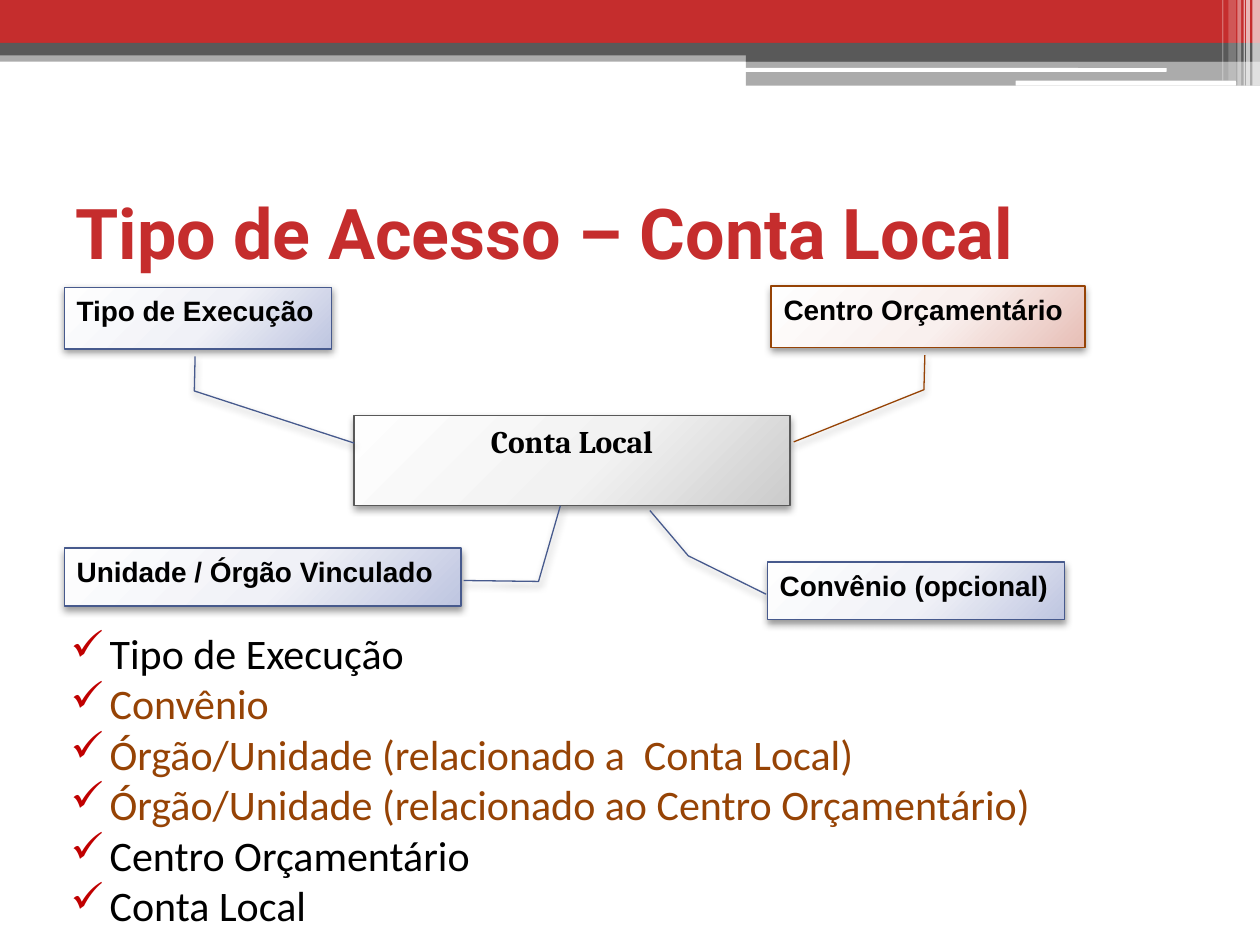
from dataclasses import dataclass

from pptx import Presentation
from pptx.dml.color import RGBColor
from pptx.enum.shapes import MSO_SHAPE as Preset
from pptx.enum.text import MSO_ANCHOR as Anchor, MSO_AUTO_SIZE as AutoSize, PP_ALIGN as Align
from pptx.oxml import parse_xml
from pptx.oxml.ns import nsdecls
from pptx.util import Inches, Pt


@dataclass(frozen=True)
class Theme:
    red: str = "C52D2D"
    gray: str = "595959"
    white: str = "FFFFFF"
    black: str = "000000"
    brown: str = "964305"
    check: str = "C00000"
    gray_box: tuple = ("595959", "F2F2F2", "CBCBCB")
    blue_box: tuple = ("475A8D", "F0F1F7", "BEC5E0")
    rose_box: tuple = ("964305", "F9F0EE", "E7BEB6")
    title_size: int = 40
    list_size: int = 24
    center_size: int = 18
    label_size: int = 16


THEME = Theme()


def add_run(paragraph, words, font, size, color, bold=False):
    run = paragraph.add_run()
    run.text = words
    run.font.name = font
    run.font.size = Pt(size)
    run.font.bold = bold
    run.font.color.rgb = RGBColor.from_string(color)


def add_bar(slide, box, color, opacity=100, preset=Preset.RECTANGLE):
    bar = slide.shapes.add_shape(preset, *map(Inches, box))
    bar.shadow.inherit = False
    bar.line.fill.background()
    bar.fill.solid()
    bar.fill.fore_color.rgb = RGBColor.from_string(color)
    if opacity < 100:
        alpha = parse_xml(f'<a:alpha {nsdecls("a")} val="{opacity * 1000}"/>')
        bar.fill._xPr.solidFill[0].append(alpha)


def add_header(slide, left, top, width):
    tab, tab_width = left + 5.92, width - 5.92
    add_bar(slide, (left, top + 0.4, width, 0.09), THEME.gray, 50)
    add_bar(slide, (left, top, width, 0.34), THEME.red)
    add_bar(slide, (left, top + 0.34, width, 0.1), THEME.gray)
    add_bar(slide, (tab, top + 0.39, tab_width, 0.1), THEME.gray)
    add_bar(slide, (tab, top + 0.48, tab_width, 0.2), THEME.gray, 50)
    for x, y, length, height in ((5.91, 0.54, 3.35, 0.03), (8.06, 0.64, 1.75, 0.04)):
        add_bar(slide, (left + x, top + y, length, height), THEME.white,
                preset=Preset.ROUNDED_RECTANGLE)
    stripes = ((9.94, 0.06, 0.68, 65), (9.89, 0.03, 0.68, 65), (9.87, 0.01, 0.68, 60),
               (9.82, 0.03, 0.68, 40), (9.75, 0.06, 0.64, 20), (9.7, 0.01, 0.64, 30))
    for x, thickness, height, opacity in stripes:
        add_bar(slide, (left + x, top, thickness, height), THEME.white, opacity)


def add_title(slide, box, words):
    title = slide.shapes.add_textbox(*map(Inches, box)).text_frame
    title.word_wrap = True
    title.vertical_anchor = Anchor.MIDDLE
    add_run(title.paragraphs[0], words, "Roboto", THEME.title_size, THEME.red, True)


def add_checklist(slide, box, items):
    checklist = slide.shapes.add_textbox(*map(Inches, box)).text_frame
    checklist.word_wrap = True
    checklist.auto_size = AutoSize.SHAPE_TO_FIT_TEXT
    checklist.margin_left = checklist.margin_right = Inches(0.09)
    checklist.margin_top = checklist.margin_bottom = Inches(0.04)
    for index, (words, color) in enumerate(items):
        item = checklist.add_paragraph() if index else checklist.paragraphs[0]
        item.alignment = Align.JUSTIFY
        properties = item._p.get_or_add_pPr()
        properties.set("marL", str(Inches(0.31)))
        properties.set("indent", str(-Inches(0.31)))
        properties.append(parse_xml(
            f'<a:buClr {nsdecls("a")}><a:srgbClr val="{THEME.check}"/></a:buClr>'))
        properties.append(parse_xml(f'<a:buChar {nsdecls("a")} char="✓"/>'))
        add_run(item, words, "Calibri", THEME.list_size, color)


def style_box(node, colors):
    border, middle, edge = colors
    node.line.color.rgb = RGBColor.from_string(border)
    node.line.width = Pt(0.75)
    node.fill.solid()
    stops = "".join(f'<a:gs pos="{position}000"><a:srgbClr val="{color}"/></a:gs>'
                    for position, color in ((0, "FEFEFE"), (55, middle), (100, edge)))
    gradient = parse_xml(
        f'<a:gradFill {nsdecls("a")} rotWithShape="1"><a:gsLst>{stops}</a:gsLst>'
        '<a:path path="circle"><a:fillToRect l="-40000" t="-90000" r="140000" b="190000"/>'
        '</a:path></a:gradFill>')
    properties = node._element.spPr
    properties.replace(properties.solidFill, gradient)
    node.shadow.inherit = False
    properties.effectLst.append(parse_xml(
        f'<a:outerShdw {nsdecls("a")} blurRad="{Pt(4.1)}" dist="{Pt(2)}" dir="5400000" '
        f'rotWithShape="0"><a:srgbClr val="{THEME.black}"><a:alpha val="40000"/></a:srgbClr>'
        '</a:outerShdw>'))


def add_node(slide, box, words, colors, font, size, align=Align.LEFT, leader=None):
    preset = Preset.LINE_CALLOUT_2 if leader else Preset.RECTANGLE
    node = slide.shapes.add_shape(preset, *map(Inches, box))
    for index, value in enumerate(leader or ()):
        node.adjustments[index] = value
    style_box(node, colors)
    label = node.text_frame
    label.word_wrap = True
    label.vertical_anchor = Anchor.TOP
    label.paragraphs[0].alignment = align
    add_run(label.paragraphs[0], words, font, size, THEME.black, True)


def add_account_map(slide, left, top):
    add_node(slide, (left + 2.3, top + 1.03, 3.46, 0.71), "Conta Local", THEME.gray_box,
             "Cambria", THEME.center_size, Align.CENTER)
    callouts = (
        ("Tipo de Execução", (0, 0.01, 2.12, 0.49), THEME.blue_box,
         (1.12, 0.49, 1.679, 0.487, 2.524, 1.086)),
        ("Convênio (opcional)", (5.58, 2.19, 2.36, 0.46), THEME.blue_box,
         (0.559, -0.004, -0.106, -0.266, -0.887, -0.395)),
        ("Unidade / Órgão Vinculado", (0, 2.08, 3.15, 0.46), THEME.blue_box,
         (0.56, 1.006, 0.577, 1.195, -0.731, 1.25)),
        ("Centro Orçamentário", (5.61, 0, 2.49, 0.49), THEME.rose_box,
         (1.12, 0.49, 1.679, 0.487, 2.524, 0.072)),
    )
    for words, (x, y, width, height), colors, leader in callouts:
        add_node(slide, (left + x, top + y, width, height), words, colors,
                 "Arial", THEME.label_size, leader=leader)


def main():
    deck = Presentation()
    deck.slide_width, deck.slide_height = Inches(10), Inches(7.5)
    slide = deck.slides.add_slide(deck.slide_layouts[6])
    add_header(slide, 0, 0, 10)
    add_title(slide, (0.5, 1.25, 9, 1.17), "Tipo de Acesso – Conta Local")
    add_checklist(slide, (0.47, 4.94, 7.88, 2.51), (
        ("Tipo de Execução", THEME.black),
        ("Convênio", THEME.brown),
        ("Órgão/Unidade (relacionado a  Conta Local)", THEME.brown),
        ("Órgão/Unidade (relacionado ao Centro Orçamentário)", THEME.brown),
        ("Centro Orçamentário", THEME.black),
        ("Conta Local", THEME.black),
    ))
    add_account_map(slide, 0.51, 2.27)
    deck.save("out.pptx")


if __name__ == "__main__":
    main()
